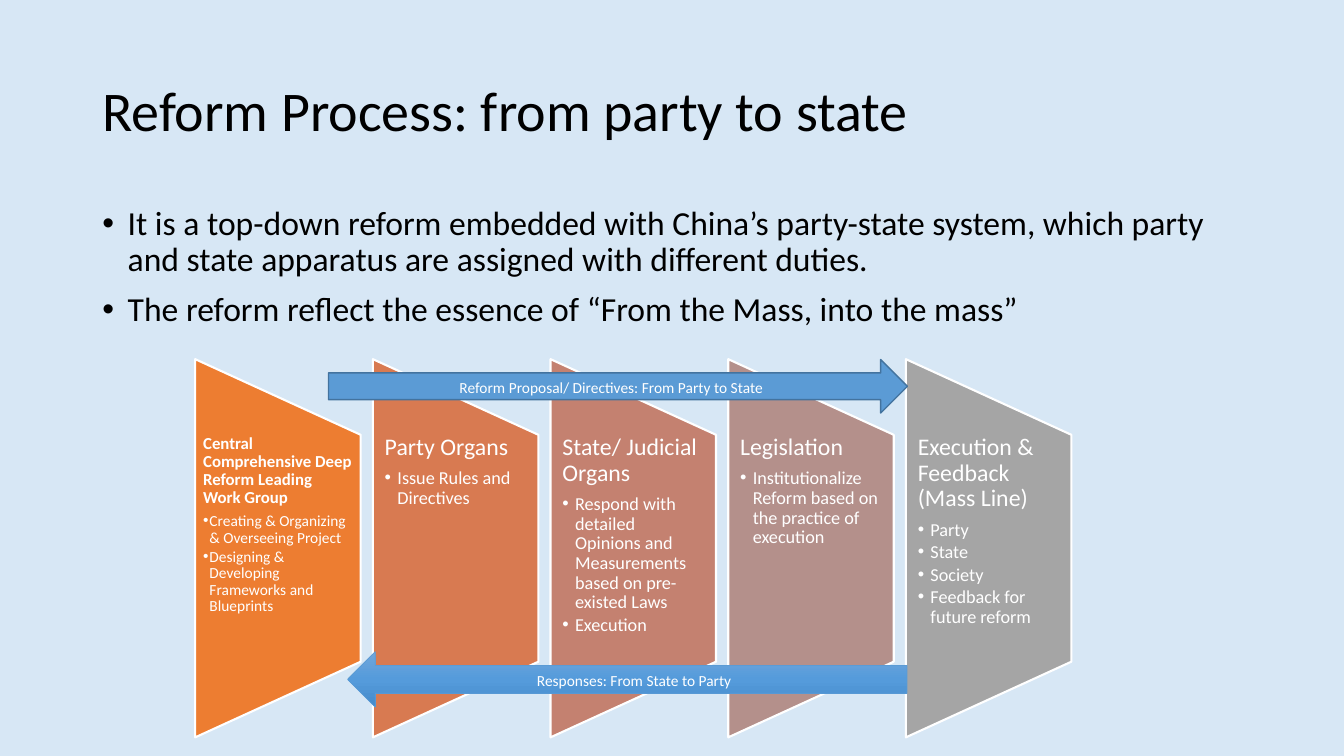
import copy
import pptx
import pptx.util
import pptx.dml.color
import pptx.enum.shapes
import pptx.enum.text
import pptx.oxml.ns
import lxml.etree

Cm = pptx.util.Cm
Pt = pptx.util.Pt
Kind = pptx.enum.shapes.MSO_SHAPE
Anchor = pptx.enum.text.MSO_ANCHOR
Align = pptx.enum.text.PP_ALIGN

STAGES = [
    ("ED7D31", "Central Comprehensive Deep Reform Leading Work Group",
     ["Creating & Organizing & Overseeing Project",
      "Designing & Developing Frameworks and Blueprints"]),
    ("D87A51", "Party Organs", ["Issue Rules and Directives"]),
    ("C48170", "State/ Judicial Organs",
     ["Respond with detailed Opinions and Measurements based on pre-existed Laws",
      "Execution"]),
    ("B4908B", "Legislation",
     ["Institutionalize Reform based on the practice of execution"]),
    ("A5A5A5", "Execution & Feedback (Mass Line)",
     ["Party", "State", "Society", "Feedback for future reform"]),
]


def color(code):
    return pptx.dml.color.RGBColor.from_string(code)


def write(frame, text, size=24, ink="000000", bold=False, hang=0,
          before=0, after=0, line=0.9, align=Align.LEFT):
    first = not frame.text
    para = frame.paragraphs[0] if first else frame.add_paragraph()
    if hang:
        props = para._p.get_or_add_pPr()
        props.set("marL", str(Cm(hang)))
        props.set("indent", str(-Cm(hang)))
        for tag, key, value in (("a:buFont", "typeface", "Arial"),
                                ("a:buChar", "char", "•")):
            mark = lxml.etree.SubElement(props, pptx.oxml.ns.qn(tag))
            mark.set(key, value)
    para.alignment = align
    para.line_spacing = line
    para.space_before = Pt(0 if first else before)
    para.space_after = Pt(after)
    run = para.add_run()
    run.text = text
    font = run.font
    font.name = "Calibri"
    font.size = Pt(size)
    font.bold = bold
    font.color.rgb = color(ink)


def add_text(slide, left, top, width, height, side=0.25, edge=0.13,
             anchor=Anchor.TOP):
    box = slide.shapes.add_textbox(Cm(left), Cm(top), Cm(width), Cm(height))
    frame = box.text_frame
    frame.word_wrap = True
    frame.vertical_anchor = anchor
    frame.margin_left = frame.margin_right = Cm(side)
    frame.margin_top = frame.margin_bottom = Cm(edge)
    return frame


def add_form(slide, kind, left, top, width, height, fill, edge, weight):
    form = slide.shapes.add_shape(kind, Cm(left), Cm(top), Cm(width), Cm(height))
    form.shadow.inherit = False
    form.fill.solid()
    form.fill.fore_color.rgb = color(fill)
    form.line.color.rgb = color(edge)
    form.line.width = Pt(weight)
    return form


def add_title(slide, left, top, width, height):
    frame = add_text(slide, left, top, width, height, anchor=Anchor.MIDDLE)
    write(frame, "Reform Process: from party to state", size=40)


def add_points(slide, left, top, width, height):
    frame = add_text(slide, left, top, width, height)
    for text in (
        "It is a top-down reform embedded with China’s party-state system, "
        "which party and state apparatus are assigned with different duties.",
        "The reform reflect the essence of “From the Mass, into the mass”",
    ):
        write(frame, text, hang=0.64, before=10)


def add_stage(slide, left, top, width, height, fill, head, points, lead):
    form = add_form(slide, Kind.FLOWCHART_MANUAL_OPERATION,
                    left + (width - height) / 2, top + (height - width) / 2,
                    height, width, fill, "FFFFFF", 1.5)
    form.rotation = 270
    frame = add_text(slide, left, top + height / 5, width, height * 0.6,
                     side=0.2 if lead else 0.3, edge=0)
    write(frame, head, size=12 if lead else 17, ink="FFFFFF", bold=lead,
          after=4.2 if lead else 6)
    for point in points:
        write(frame, point, size=11 if lead else 13, ink="FFFFFF",
              hang=0.16 if lead else 0.32, after=1.65 if lead else 2)


def add_stages(slide, left, top, width, height):
    wide = 4.17
    step = (width - wide) / (len(STAGES) - 1)
    for i, (fill, head, points) in enumerate(STAGES):
        add_stage(slide, left + i * step, top, wide, height,
                  fill, head, points, i == 0)


def add_arrow(slide, left, top, width, height, kind, text, edge, weight):
    form = add_form(slide, kind, left, top, width, height, "5B9BD5", edge, weight)
    frame = form.text_frame
    frame.word_wrap = True
    frame.vertical_anchor = Anchor.MIDDLE
    write(frame, text, size=11, ink="FFFFFF", line=1.07, after=8,
          align=Align.CENTER)
    return form


def shade(form, codes):
    fill = form.fill
    fill.gradient()
    fill.gradient_angle = 270
    stop = fill.gradient_stops[0]._gs
    stop.addnext(copy.deepcopy(stop))
    for i, (stop, code) in enumerate(zip(fill.gradient_stops, codes)):
        stop.position = i / (len(codes) - 1)
        stop.color.rgb = color(code)


def main():
    deck = pptx.Presentation()
    deck.slide_width = Cm(33.87)
    deck.slide_height = Cm(19.05)
    slide = deck.slides.add_slide(deck.slide_layouts[6])
    back = slide.background.fill
    back.solid()
    back.fore_color.rgb = color("D7E7F5")
    add_title(slide, 2.33, 1.01, 29.21, 3.68)
    add_points(slide, 2.33, 5.07, 29.21, 12.09)
    add_stages(slide, 4.92, 9.05, 22.08, 9.53)
    add_arrow(slide, 8.28, 9.06, 14.59, 1.35, Kind.RIGHT_ARROW,
              "Reform Proposal/ Directives: From Party to State", "43739E", 1)
    reply = add_arrow(slide, 8.76, 16.42, 14.1, 1.4, Kind.LEFT_ARROW,
                      "Responses: From State to Party", "5B9BD5", 0.5)
    shade(reply, ["71A6DB", "559BDB", "448ACA"])
    deck.save("out.pptx")


if __name__ == "__main__":
    main()
